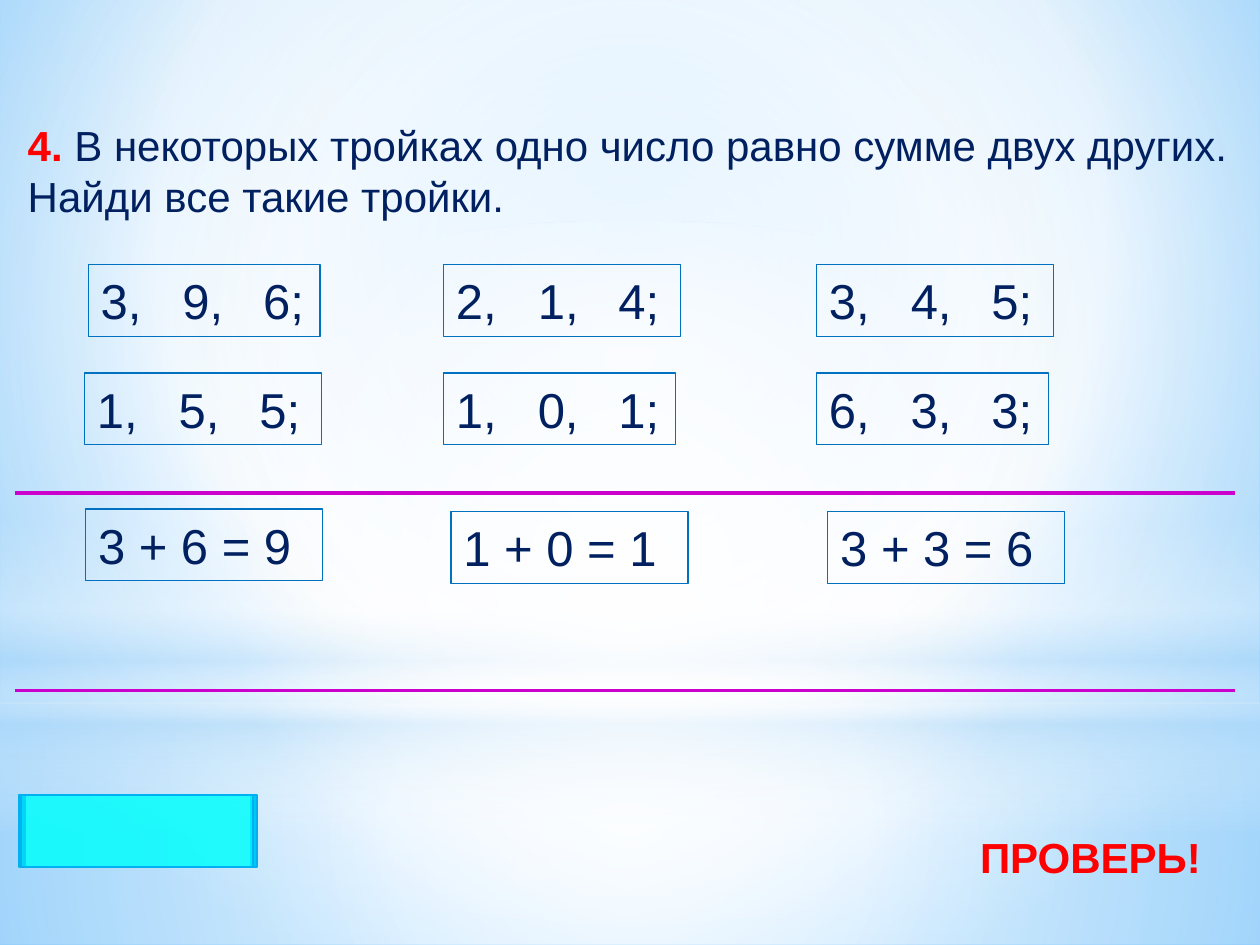
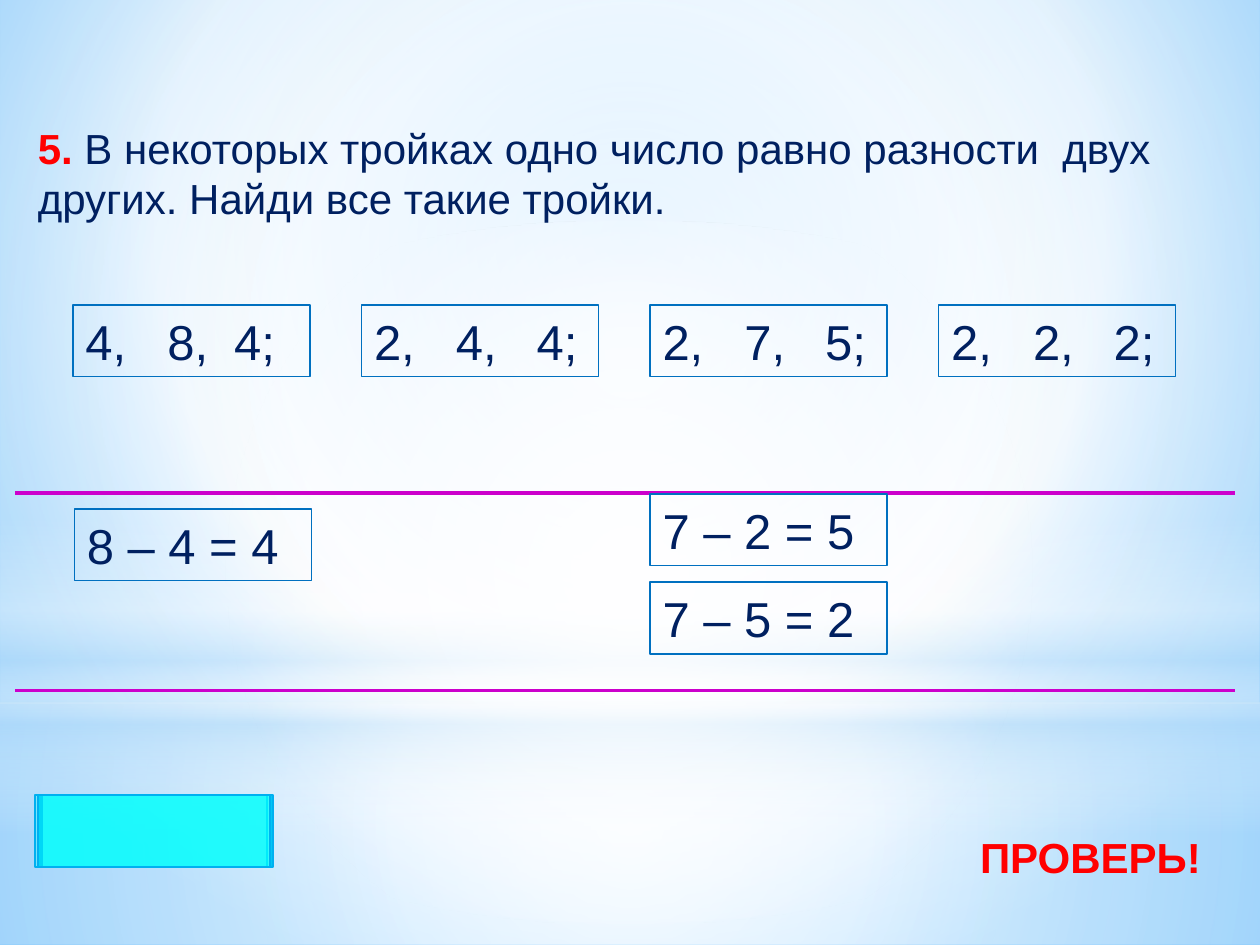
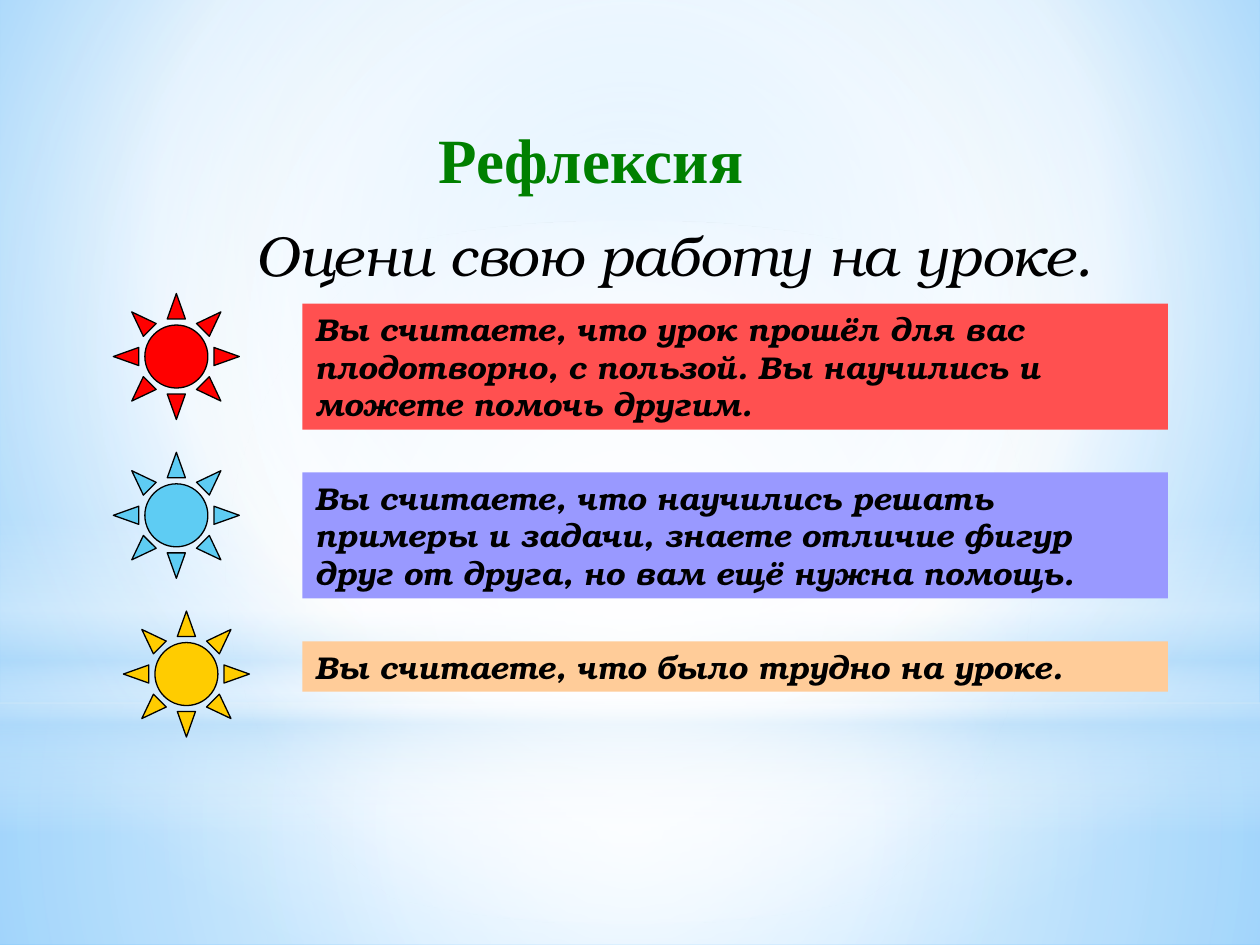
from dataclasses import dataclass

from lxml import etree
from pptx import Presentation
from pptx.dml.color import RGBColor
from pptx.enum.shapes import MSO_CONNECTOR, MSO_SHAPE
from pptx.enum.text import MSO_ANCHOR, MSO_AUTO_SIZE, PP_ALIGN
from pptx.oxml.ns import qn
from pptx.util import Inches, Pt

RECT, OVAL, SUN = MSO_SHAPE.RECTANGLE, MSO_SHAPE.OVAL, MSO_SHAPE.SUN
PROCESS = MSO_SHAPE.FLOWCHART_PROCESS
STRAIGHT = MSO_CONNECTOR.STRAIGHT
LEFT, CENTER = PP_ALIGN.LEFT, PP_ALIGN.CENTER
TOP = MSO_ANCHOR.TOP
NO_FIT = MSO_AUTO_SIZE.NONE
TITLE_ONLY = 5


@dataclass(frozen=True)
class Theme:
    sans: str = "Arial"
    serif: str = "Times New Roman"
    script: str = "TeX Gyre Bonum"
    navy: str = "002060"
    red: str = "FF0000"
    green: str = "008000"
    black: str = "000000"
    box_line: str = "0070C0"
    rule: str = "CC00CC"
    sheet: str = "00FFFF"
    sheet_line: str = "00B0F0"
    note: int = 18
    task: int = 24
    number: int = 28
    lead: int = 32
    heading: int = 36


T = Theme()

BACKGROUND = ([(0, "9ED5FF", 100), (60, "FFFFFF", 100), (100, "5BB9FF", 100)], (20, 10, 20, 60))
MIDDLE = (50, 50, 50, 50)
DECOR = [
    (RECT, (0, 5.58, 10, 1.92),
     [(0, "FFFFFF", 91), (37, "FFFFFF", 76), (100, "B4DCFA", 79)], MIDDLE),
    (RECT, (0, 0, 10, 5.58),
     [(0, "FFFFFF", 89), (48, "FFFFFF", 62), (100, "B4DCFA", 79)], MIDDLE),
    (RECT, (0, 4.12, 10, 2.5),
     [(0, "FFFFFF", 0), (29, "FFFFFF", 30), (45, "B4DCFA", 40),
      (55, "FFFFFF", 26), (65, "B4DCFA", 60), (100, "FFFFFF", 0)], None),
    (OVAL, (0, 1.75, 10, 5.58), [(0, "FFFFFF", 100), (56, "FFFFFF", 0)], MIDDLE),
]

WIDE, NARROW, BOX_HEIGHT = 1.88, 1.84, 0.57
TABS, TIGHT_TABS = (0.65, 1.29), (0.65, 1.18)
RULE_TOPS = (3.91, 5.48)
SHEET_OFFSETS = (0, 0.03, 0.05, 0.02, 0.02)
CHECK = "ПРОВЕРЬ!"

TASKS = [
    {
        "number": "4. ",
        "text": "В некоторых тройках одно число равно сумме двух других. Найди все такие тройки.",
        "title_at": (0.12, 0.9, 9.92, 0.94),
        "triples": [
            ("3, 9, 6;", 0.7, 2.1, NARROW, TABS),
            ("2, 1, 4;", 3.52, 2.1, WIDE, TABS),
            ("3, 4, 5;", 6.48, 2.1, WIDE, TABS),
            ("1, 5, 5;", 0.67, 2.96, WIDE, TABS),
            ("1, 0, 1;", 3.52, 2.96, NARROW, TABS),
            ("6, 3, 3;", 6.48, 2.96, NARROW, TABS),
        ],
        "answers": [("3 + 6 = 9", 0.68, 4.04), ("1 + 0 = 1", 3.58, 4.06), ("3 + 3 = 6", 6.57, 4.06)],
        "sheet_left": 0.15,
    },
    {
        "number": "5. ",
        "text": "В некоторых тройках одно число равно разности  двух других. Найди все такие тройки.",
        "title_at": (0.2, 0.92, 9.61, 0.94),
        "triples": [
            (triple, 0.58 + 2.29 * i, 2.42, WIDE, tabs)
            for i, (triple, tabs) in enumerate([
                ("4, 8, 4;", TIGHT_TABS), ("2, 4, 4;", TABS),
                ("2, 7, 5;", TABS), ("2, 2, 2;", TABS)])
        ],
        "answers": [("8 – 4 = 4", 0.59, 4.04), ("7 – 2 = 5", 5.16, 3.92), ("7 – 5 = 2", 5.16, 4.62)],
        "sheet_left": 0.28,
    },
]

HEADING = "Рефлексия"
LEAD = "Оцени свою работу на уроке."
REFLECTION = [
    ("Вы считаете, что урок прошёл для вас плодотворно, с пользой. "
     "Вы научились и можете помочь другим.", "FF5050", 1, "FF0000", 0.9),
    ("Вы считаете, что научились решать примеры и задачи, знаете отличие фигур "
     "друг от друга, но вам ещё нужна помощь.", "9999FF", 1, "5ECCF3", 0.9),
    ("Вы считаете, что было трудно на уроке.", "FFCC99", 0.4, "FFCC00", 0.98),
]


def rgb(value):
    return RGBColor.from_string(value)


def child(parent, tag, **attrs):
    return etree.SubElement(parent, qn(tag), {k: str(v) for k, v in attrs.items()})


def set_gradient(props, stops, focus):
    grad = etree.Element(qn("a:gradFill"), rotWithShape="1")
    stop_list = child(grad, "a:gsLst")
    for pos, color, alpha in stops:
        stop = child(stop_list, "a:gs", pos=pos * 1000)
        clr = child(stop, "a:srgbClr", val=color)
        if alpha < 100:
            child(clr, "a:alpha", val=alpha * 1000)
    if focus:
        path = child(grad, "a:path", path="circle")
        child(path, "a:fillToRect", **{side: v * 1000 for side, v in zip("ltrb", focus)})
    else:
        child(grad, "a:lin", ang=90 * 60000, scaled=0)
    props.replace(props.find(qn("a:solidFill")), grad)


def add_box(s, kind, at, fill=None, line=None, width=0.75, alpha=None):
    shape = s.shapes.add_shape(kind, *map(Inches, at))
    shape.shadow.inherit = False
    if fill:
        shape.fill.solid()
        shape.fill.fore_color.rgb = rgb(fill)
        if alpha:
            clr = shape.element.spPr.find(qn("a:solidFill"))[0]
            child(clr, "a:alpha", val=alpha * 1000)
    else:
        shape.fill.background()
    if line:
        shape.line.color.rgb = rgb(line)
        shape.line.width = Pt(width)
    else:
        shape.line.fill.background()
    return shape


def put_text(shape, *runs, size, font=T.sans, color=T.navy, bold=False, italic=False,
             align=LEFT, tabs=()):
    tf = shape.text_frame
    tf.word_wrap = True
    tf.auto_size = NO_FIT
    tf.vertical_anchor = TOP
    p = tf.paragraphs[0]
    p.alignment = align
    for text, override in runs:
        r = p.add_run()
        r.text = text
        r.font.name, r.font.size = font, Pt(size)
        r.font.bold, r.font.italic = override.get("bold", bold), italic
        r.font.color.rgb = rgb(override.get("color", color))
    if tabs:
        tab_list = child(p._p.get_or_add_pPr(), "a:tabLst")
        for pos in tabs:
            child(tab_list, "a:tab", pos=Inches(pos), algn="l")


def place_title(s, at):
    title = s.shapes.title
    title.left, title.top, title.width, title.height = map(Inches, at)
    return title


def add_label(s, at, text, **fmt):
    put_text(s.shapes.add_textbox(*map(Inches, at)), (text, {}), **fmt)


def add_rule(s, top):
    line = s.shapes.add_connector(STRAIGHT, Inches(0.12), Inches(top), Inches(9.8), Inches(top))
    line.line.color.rgb = rgb(T.rule)
    line.line.width = Pt(2.25)
    child(line.element.spPr, "a:effectLst")


def style_master(prs, s):
    master = prs.slide_master
    master.background.fill.solid()
    set_gradient(master.element.xpath("p:cSld/p:bg/p:bgPr")[0], *BACKGROUND)
    tree = master.shapes.element
    for i, (kind, at, stops, focus) in enumerate(DECOR):
        shape = add_box(s, kind, at, fill="FFFFFF")
        set_gradient(shape.element.spPr, stops, focus)
        shape.element.xpath("p:nvSpPr/p:cNvPr")[0].set("id", str(101 + i))
        tree.insert(2 + i, shape.element)


def build_task(s, task):
    put_text(place_title(s, task["title_at"]),
             (task["number"], {"color": T.red, "bold": True}), (task["text"], {}), size=T.task)
    for triple, left, top, width, tabs in task["triples"]:
        box = add_box(s, RECT, (left, top, width, BOX_HEIGHT), line=T.box_line)
        put_text(box, (triple.replace(" ", "\t"), {}), size=T.number, tabs=tabs)
    for top in RULE_TOPS:
        add_rule(s, top)
    add_label(s, (7.68, 6.55, 2.16, 0.5), CHECK, size=T.task, color=T.red, bold=True)
    for offset in SHEET_OFFSETS:
        add_box(s, PROCESS, (task["sheet_left"] + offset, 6.31, NARROW, BOX_HEIGHT),
                fill=T.sheet, line=T.sheet_line, width=1.25, alpha=30)
    for answer, left, top in task["answers"]:
        box = add_box(s, RECT, (left, top, WIDE, BOX_HEIGHT), line=T.box_line)
        put_text(box, (answer, {}), size=T.number)


def build_reflection(s):
    put_text(place_title(s, (1.38, 0.91, 6.62, 0.87)), (HEADING, {}),
             size=T.heading, font=T.serif, color=T.green, bold=True, align=CENTER)
    add_label(s, (1.93, 1.7, 7.66, 0.63), LEAD,
              size=T.lead, font=T.script, color=T.black, italic=True)
    for i, (text, fill, height, sun, sun_left) in enumerate(REFLECTION):
        add_box(s, SUN, (sun_left, 2.33 + 1.26 * i, 1, 1), fill=sun, line=T.black)
        band = add_box(s, RECT, (2.4, 2.41 + 1.34 * i, 6.87, height), fill=fill)
        put_text(band, (text, {}), size=T.note, font=T.script, color=T.black,
                 bold=True, italic=True)


def main():
    prs = Presentation()
    prs.slide_width, prs.slide_height = Inches(10), Inches(7.5)
    layout = prs.slide_layouts[TITLE_ONLY]
    slides = [prs.slides.add_slide(layout) for _ in range(len(TASKS) + 1)]
    style_master(prs, slides[0])
    for s, task in zip(slides, TASKS):
        build_task(s, task)
    build_reflection(slides[-1])
    prs.save("out.pptx")


if __name__ == "__main__":
    main()
